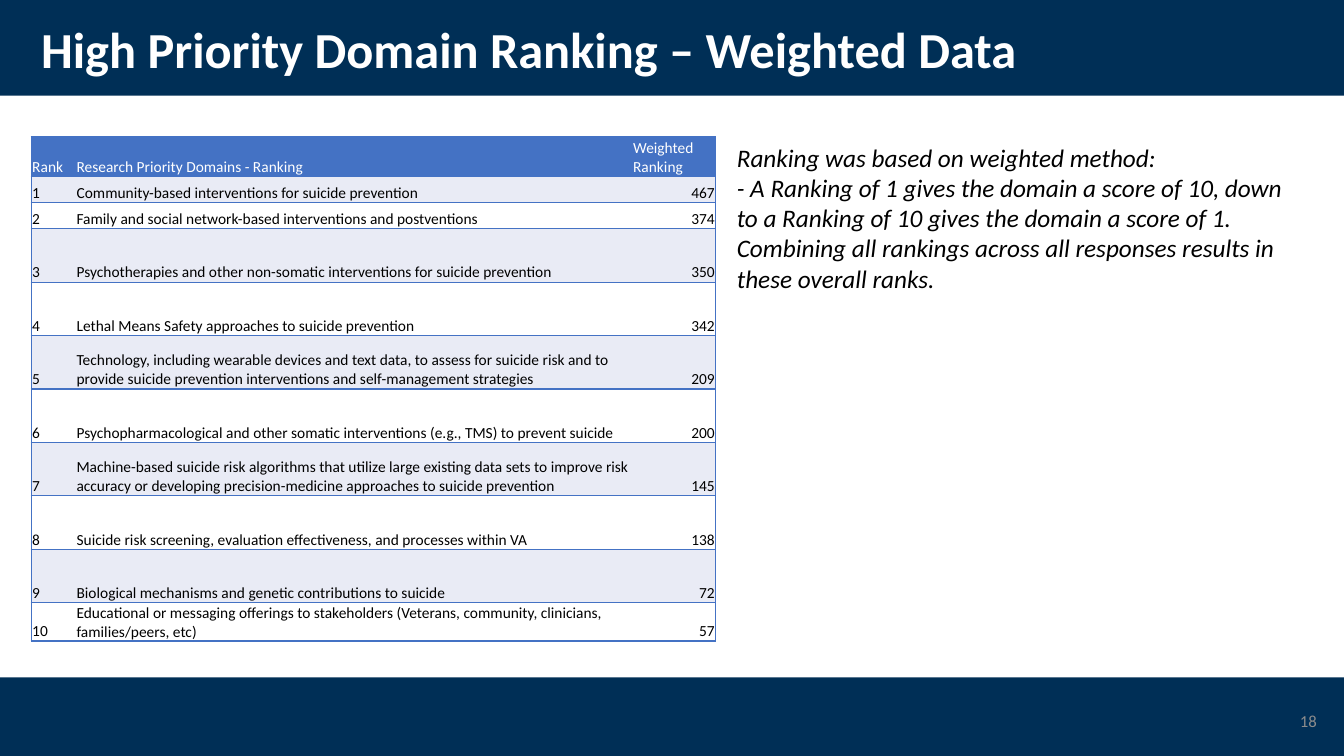
from lxml import etree
from pptx import Presentation
from pptx.dml.color import RGBColor
from pptx.enum import shapes, text
from pptx.oxml import ns
from pptx.util import Inches, Pt

TITLE = "High Priority Domain Ranking – Weighted Data"
PAGE_NUMBER = "18"
HEADINGS = ("Rank", "Research Priority Domains - Ranking", "Weighted Ranking")
DOMAINS = [  # domain, weighted ranking, row height
    ("Community-based interventions for suicide prevention", 467, 0.26),
    ("Family and social network-based interventions and postventions", 374, 0.26),
    ("Psychotherapies and other non-somatic interventions for suicide prevention", 350, 0.53),
    ("Lethal Means Safety approaches to suicide prevention", 342, 0.53),
    ("Technology, including wearable devices and text data, to assess for suicide risk and to "
     "provide suicide prevention interventions and self-management strategies", 209, 0.53),
    ("Psychopharmacological and other somatic interventions (e.g., TMS) to prevent suicide",
     200, 0.53),
    ("Machine-based suicide risk algorithms that utilize large existing data sets to improve risk "
     "accuracy or developing precision-medicine approaches to suicide prevention", 145, 0.53),
    ("Suicide risk screening, evaluation effectiveness, and processes within VA", 138, 0.53),
    ("Biological mechanisms and genetic contributions to suicide", 72, 0.53),
    ("Educational or messaging offerings to stakeholders (Veterans, community, clinicians, "
     "families/peers, etc)", 57, 0.38),
]
METHOD = [
    "Ranking was based on weighted method:",
    "- A Ranking of 1 gives the domain a score of 10, down to a Ranking of 10 gives the domain "
    "a score of 1. Combining all rankings across all responses results in these overall ranks.",
]
HEADER_HEIGHT = 0.39
COLUMN_WIDTHS = (0.44, 5.52, 0.83)

FONT = "Calibri"
NAVY = RGBColor(0x00, 0x2F, 0x56)
BLUE = RGBColor(0x44, 0x72, 0xC4)
PALE = RGBColor(0xE9, 0xEB, 0xF5)
WHITE = RGBColor(0xFF, 0xFF, 0xFF)
BLACK = RGBColor(0x00, 0x00, 0x00)
GREY = RGBColor(0x8C, 0x8C, 0x8C)


def style(para, size, color, align=text.PP_ALIGN.LEFT, bold=False, italic=False):
    para.alignment = align
    font = para.font
    font.name, font.size, font.bold, font.italic = FONT, Pt(size), bold, italic
    font.color.rgb = color


def add_band(page, top, height):
    band = page.shapes.add_shape(shapes.MSO_SHAPE.RECTANGLE, 0, Inches(top),
                                 Inches(13.33), Inches(height))
    band.shadow.inherit = False
    band.fill.solid()
    band.fill.fore_color.rgb = NAVY
    band.line.fill.background()


def add_text(page, place, lines, anchor, **look):
    box = page.shapes.add_textbox(*map(Inches, place))
    frame = box.text_frame
    frame.word_wrap = True
    frame.vertical_anchor = anchor
    frame.text = "\n".join(lines)
    for para in frame.paragraphs:
        style(para, **look)
    return frame


def set_borders(cell, visible):
    """Draw the sides named in visible (of L, R, T, B) and hide the others."""
    properties = cell._tc.get_or_add_tcPr()
    for side in "LRTB":
        line = etree.SubElement(properties, ns.qn(f"a:ln{side}"), w=str(Pt(1)))
        if side in visible:
            fill = etree.SubElement(line, ns.qn("a:solidFill"))
            etree.SubElement(fill, ns.qn("a:srgbClr"), val=str(BLUE))
        else:
            etree.SubElement(line, ns.qn("a:noFill"))


def fill_cell(cell, value, color, background, align, borders):
    cell.text = str(value)
    cell.vertical_anchor = text.MSO_ANCHOR.BOTTOM
    cell.margin_left = cell.margin_right = cell.margin_top = Inches(0.01)
    cell.margin_bottom = 0
    style(cell.text_frame.paragraphs[0], 11, color, align)
    set_borders(cell, borders)
    cell.fill.solid()
    cell.fill.fore_color.rgb = background


def add_ranking(page):
    rows = [HEADINGS] + [(rank, name, score)
                         for rank, (name, score, _) in enumerate(DOMAINS, 1)]
    heights = [HEADER_HEIGHT] + [height for _, _, height in DOMAINS]
    table = page.shapes.add_table(len(rows), len(HEADINGS), Inches(0.31), Inches(1.36),
                                  Inches(sum(COLUMN_WIDTHS)), Inches(sum(heights))).table
    table.horz_banding = False
    for column, width in zip(table.columns, COLUMN_WIDTHS):
        column.width = Inches(width)
    for r, (row, height) in enumerate(zip(rows, heights)):
        table.rows[r].height = Inches(height)
        background = BLUE if r == 0 else PALE if r % 2 else WHITE
        for c, (value, edge) in enumerate(zip(row, ("L", "", "R"))):
            is_score = r > 0 and c == 2
            fill_cell(table.cell(r, c), value, BLACK if r else WHITE, background,
                      text.PP_ALIGN.RIGHT if is_score else text.PP_ALIGN.LEFT, "TB" + edge)


def main():
    deck = Presentation()
    deck.slide_width, deck.slide_height = Inches(13.33), Inches(7.5)
    page = deck.slides.add_slide(deck.slide_layouts[6])
    add_band(page, 0, 0.95)
    add_band(page, 6.72, 0.78)
    title = add_text(page, (0.31, 0.18, 11.5, 0.68), [TITLE], text.MSO_ANCHOR.MIDDLE,
                     size=36, color=WHITE, bold=True)
    title.paragraphs[0].line_spacing = 0.9
    add_text(page, (10.16, 6.95, 3, 0.4), [PAGE_NUMBER], text.MSO_ANCHOR.MIDDLE,
             size=12, color=GREY, align=text.PP_ALIGN.RIGHT)
    add_ranking(page)
    method = add_text(page, (7.21, 1.36, 5.81, 1.62), METHOD, text.MSO_ANCHOR.TOP,
                      size=18, color=BLACK, italic=True)
    method.auto_size = text.MSO_AUTO_SIZE.SHAPE_TO_FIT_TEXT
    deck.save("out.pptx")


if __name__ == "__main__":
    main()
